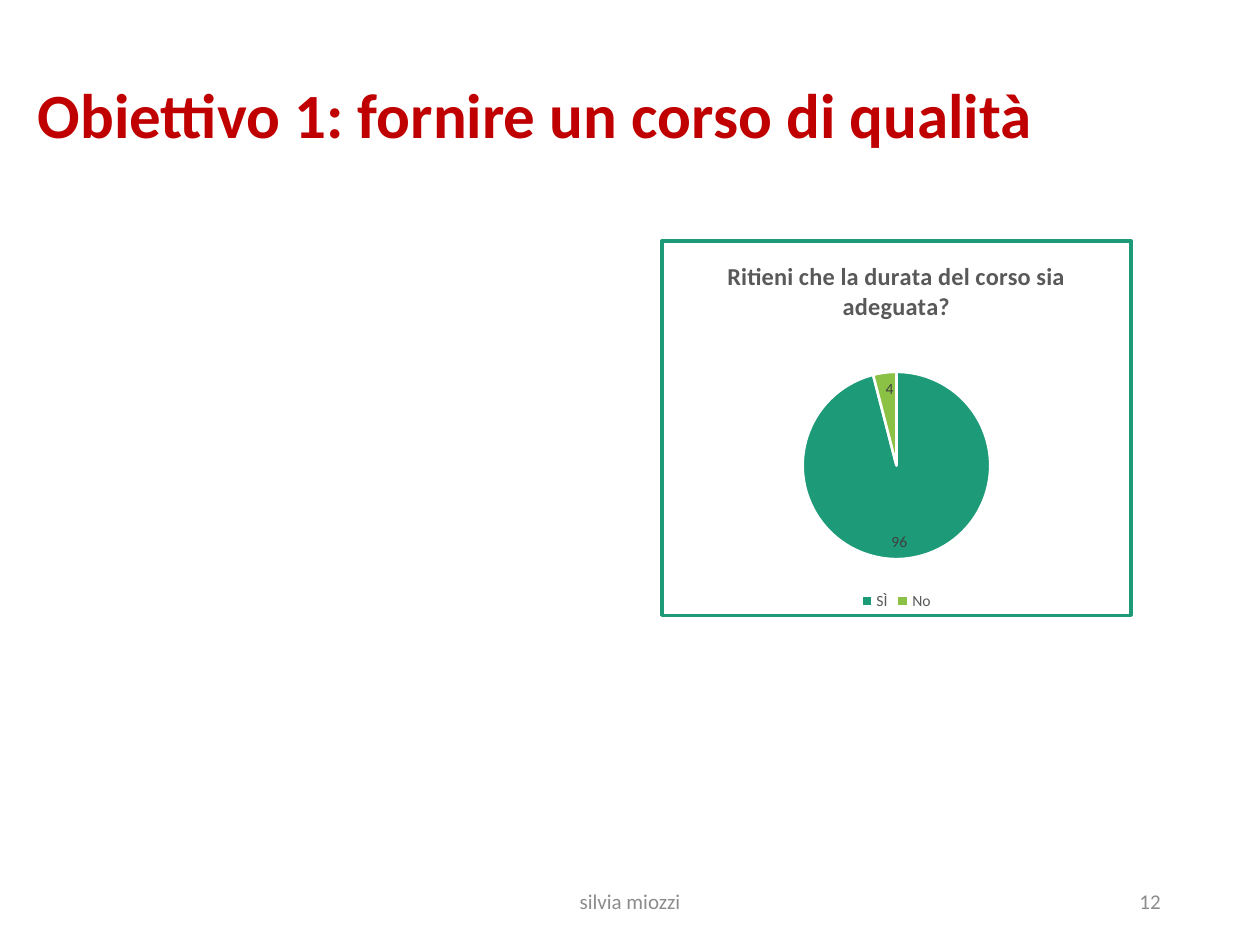
import pptx
import pptx.chart.data
import pptx.dml.color
import pptx.enum.chart
import pptx.enum.text
import pptx.oxml
import pptx.util

COLORS = {"title": "C00000", "yes": "1D9A78", "no": "8BC145", "white": "FFFFFF",
          "label": "404040", "chart": "595959", "footer": "8C8C8C"}
FONT = "Calibri"
NS = ('xmlns:c="http://schemas.openxmlformats.org/drawingml/2006/chart" '
      'xmlns:a="http://schemas.openxmlformats.org/drawingml/2006/main"')


def rgb(name):
    return pptx.dml.color.RGBColor.from_string(COLORS[name])


def style_font(font, size, color, bold=False):
    font.name = FONT
    font.size = pptx.util.Pt(size)
    font.bold = bold
    font.color.rgb = rgb(color)


def write(tf, text, size, color, bold=False, align=None, spacing=None):
    tf.word_wrap = True
    tf.vertical_anchor = pptx.enum.text.MSO_ANCHOR.MIDDLE
    p = tf.paragraphs[0]
    p.alignment = align
    p.line_spacing = spacing
    r = p.add_run()
    r.text = text
    style_font(r.font, size, color, bold)


class Deck:
    def __init__(self, width, height):
        self.prs = pptx.Presentation()
        self.prs.slide_width = pptx.util.Inches(width)
        self.prs.slide_height = pptx.util.Inches(height)
        self.slide = self.prs.slides.add_slide(self.prs.slide_layouts[5])

    def box(self, x, y, w, h):
        sw, sh = self.prs.slide_width, self.prs.slide_height
        return int(x * sw), int(y * sh), int(w * sw), int(h * sh)

    def title(self, text, *share):
        sp = self.slide.shapes.title
        sp.left, sp.top, sp.width, sp.height = self.box(*share)
        write(sp.text_frame, text, 36, "title", bold=True, spacing=0.9,
              align=pptx.enum.text.PP_ALIGN.LEFT)

    def footer(self, text, align, *share):
        sp = self.slide.shapes.add_textbox(*self.box(*share))
        write(sp.text_frame, text, 12, "footer", align=align)

    def pie(self, title, answers, *share):
        data = pptx.chart.data.CategoryChartData()
        data.categories = [name for name, value, color in answers]
        data.add_series("Series 1", [value for name, value, color in answers])
        kind = pptx.enum.chart.XL_CHART_TYPE.PIE
        chart = self.slide.shapes.add_chart(kind, *self.box(*share), data).chart
        style_font(chart.font, 10, "chart")
        chart.has_title = True
        write(chart.chart_title.text_frame, title, 14, "chart", bold=True)
        chart.has_legend = True
        chart.legend.position = pptx.enum.chart.XL_LEGEND_POSITION.BOTTOM
        chart.legend.include_in_layout = False
        style_font(chart.legend.font, 9, "chart")
        plot = chart.plots[0]
        plot.vary_by_categories = True
        for i, (name, value, color) in enumerate(answers):
            part = plot.series[0].points[i].format
            part.fill.solid()
            part.fill.fore_color.rgb = rgb(color)
            part.line.color.rgb = rgb("white")
            part.line.width = pptx.util.Pt(1.5)
        labels = plot.series[0].data_labels
        labels.show_value = True
        labels.position = pptx.enum.chart.XL_LABEL_POSITION.INSIDE_END
        style_font(labels.font, 9, "label")
        self.frame(chart, "white", "yes", 2)
        self.plot_area(chart, x=0.3, y=0.35, w=0.4, h=0.5)

    def frame(self, chart, fill, line, width):
        root = chart.element
        root.chart.addnext(pptx.oxml.parse_xml(
            f'<c:spPr {NS}><a:solidFill><a:srgbClr val="{COLORS[fill]}"/></a:solidFill>'
            f'<a:ln w="{pptx.util.Pt(width)}"><a:solidFill>'
            f'<a:srgbClr val="{COLORS[line]}"/></a:solidFill></a:ln></c:spPr>'))

    def plot_area(self, chart, **share):
        area = chart.element.chart.plotArea
        for old in area.xpath("c:layout"):
            area.remove(old)
        modes = "".join(f'<c:{k}Mode val="edge"/>' for k in "xy")
        sizes = "".join(f'<c:{k} val="{v}"/>' for k, v in share.items())
        area.insert(0, pptx.oxml.parse_xml(
            f'<c:layout {NS}><c:manualLayout><c:layoutTarget val="inner"/>'
            f'{modes}{sizes}</c:manualLayout></c:layout>'))


def main():
    align = pptx.enum.text.PP_ALIGN
    deck = Deck(10, 7.5)
    deck.title("Obiettivo 1: fornire un corso di qualità", 0.02, 0.03, 0.98, 0.19)
    deck.pie("Ritieni che la durata del corso sia adeguata?",
             [("SÌ", 96, "yes"), ("No", 4, "no")], 0.524, 0.253, 0.375, 0.4)
    deck.footer("silvia miozzi", align.CENTER, 0.331, 0.927, 0.338, 0.053)
    deck.footer("12", align.RIGHT, 0.706, 0.927, 0.225, 0.053)
    deck.prs.save("out.pptx")


if __name__ == "__main__":
    main()
